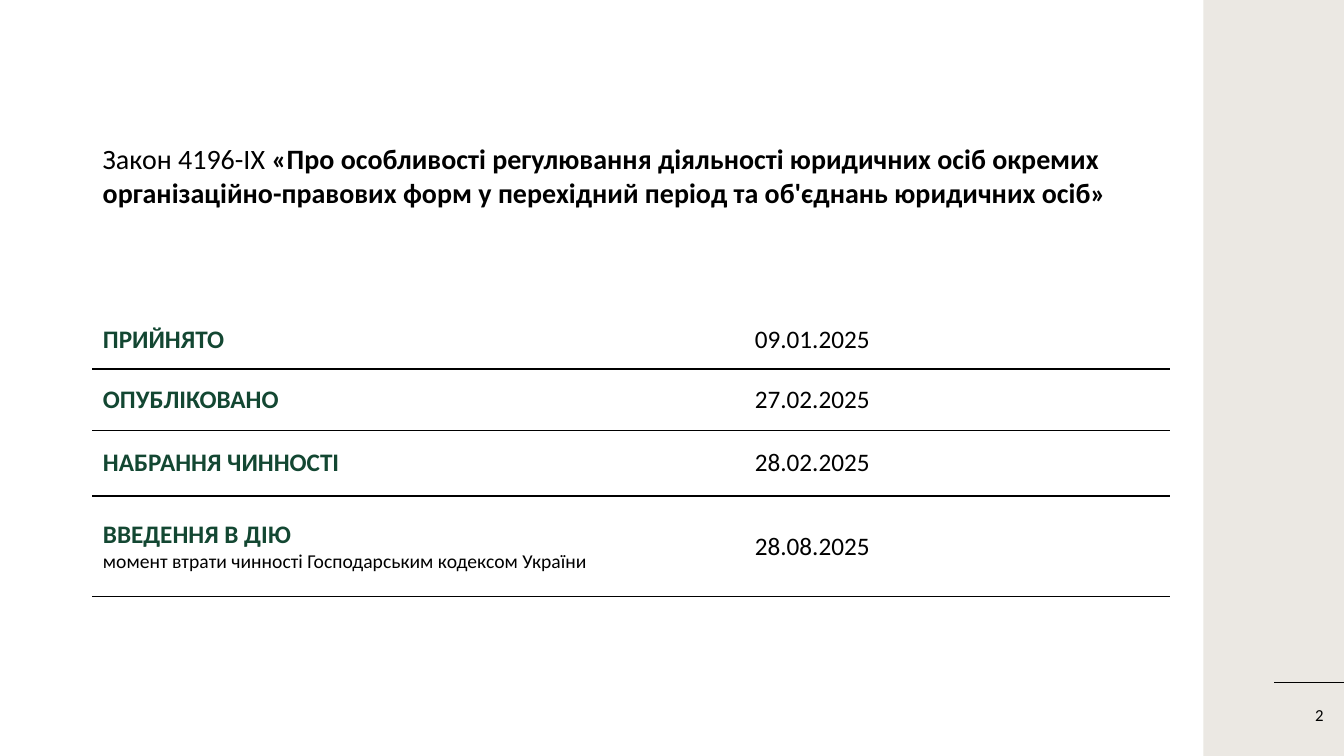
from lxml.etree import SubElement
from pptx import Presentation
from pptx.dml.color import RGBColor
from pptx.enum.shapes import MSO_CONNECTOR, MSO_SHAPE
from pptx.enum.text import MSO_ANCHOR, PP_ALIGN
from pptx.oxml.ns import qn
from pptx.util import Cm, Pt

BLACK = RGBColor(0x00, 0x00, 0x00)
WHITE = RGBColor(0xFF, 0xFF, 0xFF)
GREEN = RGBColor(0x13, 0x47, 0x32)
BEIGE = RGBColor(0xEB, 0xE8, 0xE3)
FONT = "Calibri"

LAW = "Закон 4196-IX "
LAW_TITLE = ("«Про особливості регулювання діяльності юридичних осіб окремих "
             "організаційно-правових форм у перехідний період "
             "та об'єднань юридичних осіб»")
# stage, note, date, row height in cm
STAGES = [
    ("ПРИЙНЯТО", "", "09.01.2025", 1.45),
    ("ОПУБЛІКОВАНО", "", "27.02.2025", 1.55),
    ("НАБРАННЯ ЧИННОСТІ", "", "28.02.2025", 1.65),
    ("ВВЕДЕННЯ В ДІЮ", "момент втрати чинності Господарським кодексом України",
     "28.08.2025", 2.54),
]
PAGE = "2"

SLIDE_W, SLIDE_H = 33.87, 19.05
LEFT, TABLE_TOP = 2.34, 7.85
COLUMNS = (16.43, 10.69)
WIDTH = sum(COLUMNS)
BAND_LEFT = 30.33


def add_run(p, text, size, color=BLACK, bold=False):
    r = p.add_run()
    r.text = text
    r.font.name, r.font.size, r.font.bold = FONT, Pt(size), bold
    r.font.color.rgb = color


def add_text_box(s, x, y, w, h):
    tf = s.shapes.add_textbox(Cm(x), Cm(y), Cm(w), Cm(h)).text_frame
    tf.word_wrap = True
    return tf


def style_cell(cell, top):
    """White cell with a black rule below and the given colour above."""
    cell.vertical_anchor = MSO_ANCHOR.MIDDLE
    tc_pr = cell._tc.get_or_add_tcPr()
    for side, color in (("L", WHITE), ("R", WHITE), ("T", top), ("B", BLACK)):
        ln = SubElement(tc_pr, qn(f"a:ln{side}"), w=str(Pt(1)))
        fill = SubElement(ln, qn("a:solidFill"))
        SubElement(fill, qn("a:srgbClr"), val=str(color))
    cell.fill.solid()
    cell.fill.fore_color.rgb = WHITE


def add_side_band(s):
    band = s.shapes.add_shape(MSO_SHAPE.RECTANGLE, Cm(BAND_LEFT), 0,
                              Cm(SLIDE_W - BAND_LEFT), Cm(SLIDE_H))
    band.shadow.inherit = False
    band.fill.solid()
    band.fill.fore_color.rgb = BEIGE
    band.line.fill.background()

    tf = add_text_box(s, 30.61, 17.2, 3, 1.65)
    tf.vertical_anchor = MSO_ANCHOR.MIDDLE
    tf.paragraphs[0].alignment = PP_ALIGN.RIGHT
    add_run(tf.paragraphs[0], PAGE, 12)

    rule = s.shapes.add_connector(MSO_CONNECTOR.STRAIGHT, Cm(32.11), Cm(17.2),
                                  Cm(SLIDE_W), Cm(17.2))
    rule.line.color.rgb = BLACK
    rule.line.width = Pt(0.5)
    SubElement(rule._element.spPr, qn("a:effectLst"))


def add_stage_table(s):
    height = sum(stage[-1] for stage in STAGES)
    table = s.shapes.add_table(len(STAGES), len(COLUMNS), Cm(LEFT),
                               Cm(TABLE_TOP), Cm(WIDTH), Cm(height)).table
    table.first_row = table.horz_banding = False
    for column, width in zip(table.columns, COLUMNS):
        column.width = Cm(width)
    for i, (name, note, date, row_height) in enumerate(STAGES):
        table.rows[i].height = Cm(row_height)
        stage_cell, date_cell = table.rows[i].cells
        for cell in (stage_cell, date_cell):
            style_cell(cell, BLACK if i else WHITE)
        tf = stage_cell.text_frame
        add_run(tf.paragraphs[0], name, 18, GREEN, True)
        if note:
            add_run(tf.add_paragraph(), note, 14)
        add_run(date_cell.text_frame.paragraphs[0], date, 18)


def main():
    prs = Presentation()
    prs.slide_width, prs.slide_height = Cm(SLIDE_W), Cm(SLIDE_H)
    s = prs.slides.add_slide(prs.slide_layouts[6])
    add_side_band(s)
    p = add_text_box(s, LEFT, 3.45, WIDTH, 2).paragraphs[0]
    add_run(p, LAW, 20)
    add_run(p, LAW_TITLE, 20, bold=True)
    add_stage_table(s)
    prs.save("out.pptx")


if __name__ == "__main__":
    main()
